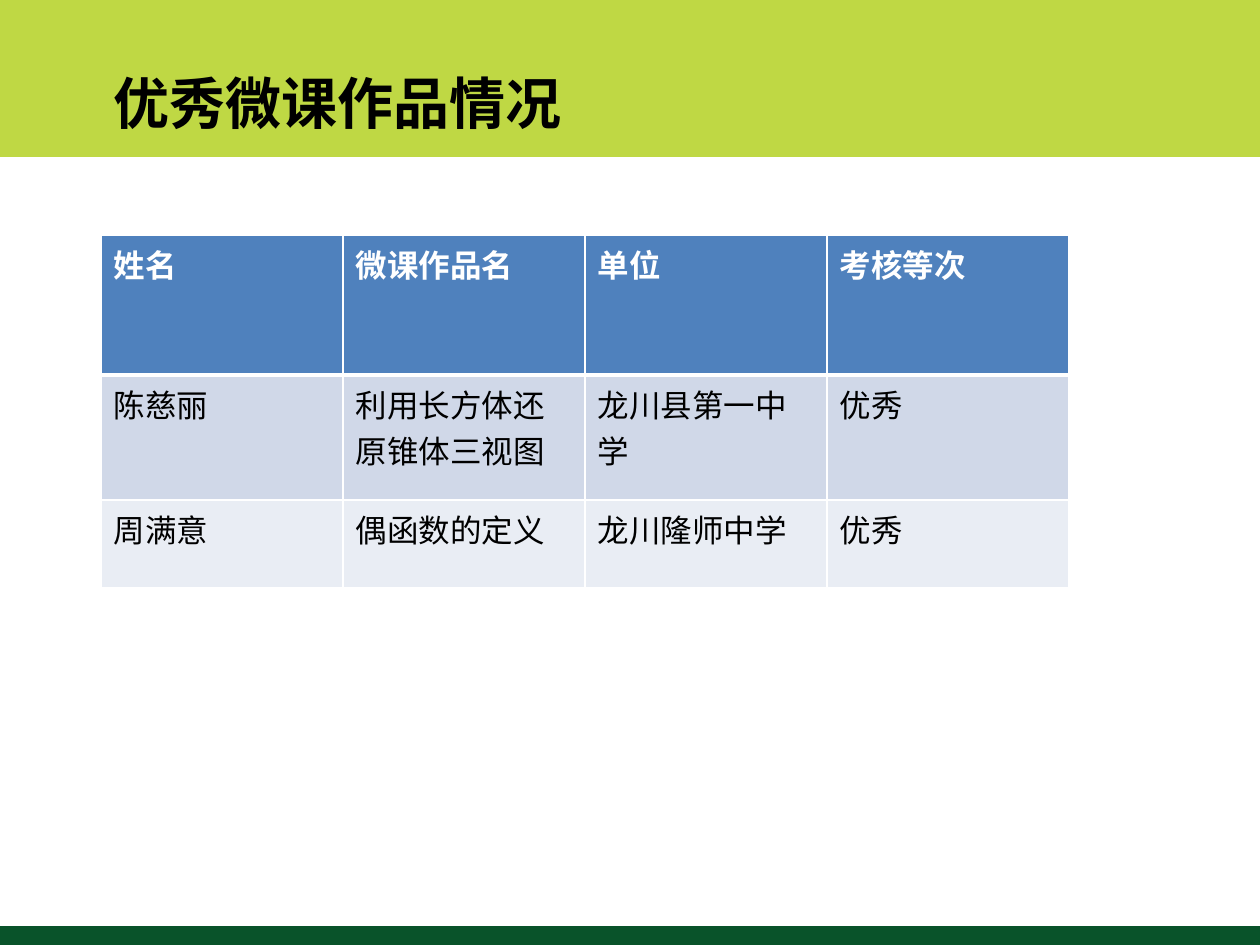
from dataclasses import dataclass

from lxml.etree import SubElement
from pptx import Presentation
from pptx.dml.color import RGBColor
from pptx.enum.lang import MSO_LANGUAGE_ID as Language
from pptx.enum.shapes import MSO_SHAPE as Shape
from pptx.oxml.ns import qn
from pptx.slide import Slide
from pptx.table import _Cell as Cell
from pptx.text.text import TextFrame
from pptx.util import Emu, Pt

EMU_PER_PX = 914400 // 126
SLIDE_W, SLIDE_H = 1260, 945
LEFT = 101

LIME = RGBColor(0xBF, 0xD8, 0x44)
FOREST = RGBColor(0x09, 0x53, 0x2A)
BLUE = RGBColor(0x4F, 0x81, 0xBD)
PALE_BLUE = RGBColor(0xD0, 0xD8, 0xE8)
LIGHT_GREY = RGBColor(0xE9, 0xED, 0xF4)
WHITE = RGBColor(0xFF, 0xFF, 0xFF)
BLACK = RGBColor(0x00, 0x00, 0x00)

MAIN_FONT = "Arial"
NAME_FONT = "Noto Sans CJK SC"


@dataclass(frozen=True)
class Band:
    top: int
    height: int
    color: RGBColor


@dataclass(frozen=True)
class Row:
    texts: tuple[str, ...]
    height: int
    fill: RGBColor
    color: RGBColor = BLACK
    bold: bool = False
    first_font: str = MAIN_FONT
    top_line: int = 1
    bottom_line: int = 1


BANDS = (Band(0, 157, LIME), Band(926, 19, FOREST))
TABLE_TOP, COLUMN_W = 235, 242
ROWS = (
    Row(("姓名", "微课作品名", "单位", "考核等次"), 140, BLUE, WHITE, bold=True, bottom_line=3),
    Row(("陈慈丽", "利用长方体还原锥体三视图", "龙川县第一中学", "优秀"), 125, PALE_BLUE,
        first_font=NAME_FONT, top_line=3),
    Row(("周满意", "偶函数的定义", "龙川隆师中学", "优秀"), 88, LIGHT_GREY,
        first_font=NAME_FONT),
)


def px(length: int) -> Emu:
    return Emu(length * EMU_PER_PX)


def write(frame: TextFrame, text: str, size: int, color: RGBColor, bold: bool,
          font_name: str = MAIN_FONT) -> None:
    frame.text = text
    font = frame.paragraphs[0].runs[0].font
    font.name, font.size, font.bold = font_name, Pt(size), bold
    font.color.rgb = color
    font.language_id = Language.SIMPLIFIED_CHINESE


def add_band(slide: Slide, band: Band) -> None:
    shape = slide.shapes.add_shape(Shape.RECTANGLE, 0, px(band.top), px(SLIDE_W), px(band.height))
    shape.shadow.inherit = False
    shape.fill.solid()
    shape.fill.fore_color.rgb = band.color
    shape.line.fill.background()


def add_title(slide: Slide, text: str) -> None:
    box = slide.shapes.add_textbox(px(LEFT), px(62), px(496), px(80))
    box.text_frame.word_wrap = True
    write(box.text_frame, text, 32, BLACK, True)


def set_borders(cell: Cell, top: int, bottom: int) -> None:
    """Draw white cell borders; top and bottom are widths in points."""
    properties = cell._tc.get_or_add_tcPr()
    for side, width in (("L", 1), ("R", 1), ("T", top), ("B", bottom)):
        line = SubElement(properties, qn(f"a:ln{side}"), w=str(Pt(width)))
        SubElement(SubElement(line, qn("a:solidFill")), qn("a:srgbClr"), val=str(WHITE))


def add_table(slide: Slide, rows: tuple[Row, ...]) -> None:
    column_count = len(rows[0].texts)
    table = slide.shapes.add_table(
        len(rows), column_count, px(LEFT), px(TABLE_TOP),
        px(COLUMN_W * column_count), px(sum(row.height for row in rows)),
    ).table
    for column in table.columns:
        column.width = px(COLUMN_W)
    for row_index, row in enumerate(rows):
        table.rows[row_index].height = px(row.height)
        for column_index, text in enumerate(row.texts):
            cell = table.cell(row_index, column_index)
            font_name = MAIN_FONT if column_index else row.first_font
            write(cell.text_frame, text, 18, row.color, row.bold, font_name)
            set_borders(cell, row.top_line, row.bottom_line)
            cell.fill.solid()
            cell.fill.fore_color.rgb = row.fill


def main() -> None:
    presentation = Presentation()
    presentation.slide_width, presentation.slide_height = px(SLIDE_W), px(SLIDE_H)
    slide = presentation.slides.add_slide(presentation.slide_layouts[6])
    for band in BANDS:
        add_band(slide, band)
    add_title(slide, "优秀微课作品情况")
    add_table(slide, ROWS)
    presentation.save("out.pptx")


if __name__ == "__main__":
    main()
